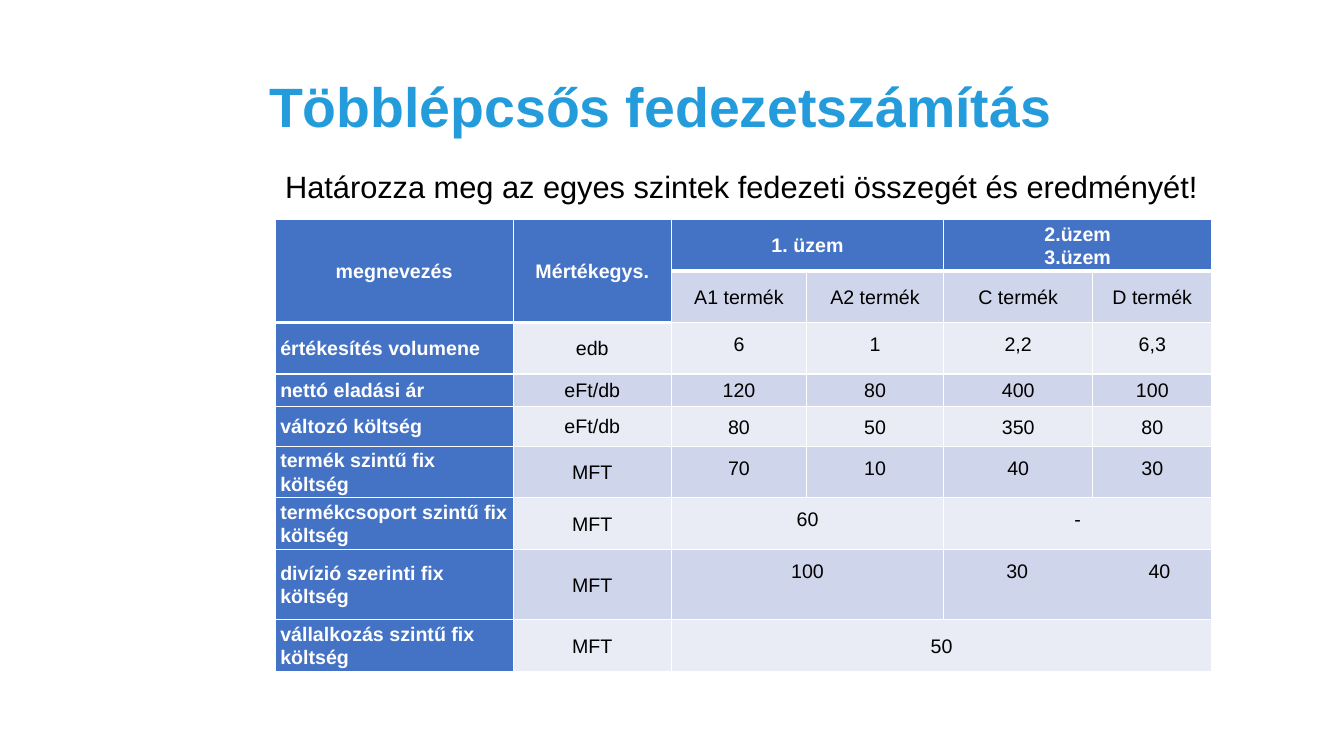
import pptx
import pptx.dml.color
import pptx.enum.shapes
import pptx.enum.text
import pptx.oxml.ns
import pptx.util
from lxml import etree

Inches = pptx.util.Inches
ALIGN = pptx.enum.text.PP_ALIGN
ANCHOR = pptx.enum.text.MSO_ANCHOR

COLORS = {
    "title": "249CDC",
    "text": "000000",
    "white": "FFFFFF",
    "header": "4472C4",
    "dark_band": "CFD5EA",
    "light_band": "E9EBF5",
}

COLUMN_WIDTHS = [2.36, 1.57, 1.34, 1.36, 1.48, 1.18]
ROW_HEIGHTS = [0.51, 0.51, 0.51, 0.32, 0.4, 0.51, 0.51, 0.7, 0.51]
COSTS = [
    ["megnevezés", "Mértékegys.", "1. üzem", "", "2.üzem\n3.üzem", ""],
    ["", "", "A1 termék", "A2 termék", "C termék", "D termék"],
    ["értékesítés volumene", "edb", "6", "1", "2,2", "6,3"],
    ["nettó eladási ár", "eFt/db", "120", "80", "400", "100"],
    ["változó költség", "eFt/db", "80", "50", "350", "80"],
    ["termék szintű fix költség", "MFT", "70", "10", "40", "30"],
    ["termékcsoport szintű fix költség", "MFT", "60", "", "-", ""],
    ["divízió szerinti fix költség", "MFT", "100", "", "\t30\t40", ""],
    ["vállalkozás szintű fix költség", "MFT", "50", "", "", ""],
]
MERGES = [
    (0, 0, 1, 0), (0, 1, 1, 1), (0, 2, 0, 3), (0, 4, 0, 5),
    (6, 2, 6, 3), (6, 4, 6, 5), (7, 2, 7, 3), (7, 4, 7, 5), (8, 2, 8, 5),
]
TOP_ALIGNED_ROWS = {2, 4, 5, 6, 7}
DIVISION_TABS = [0.68, 2.09]


def rgb(name):
    return pptx.dml.color.RGBColor.from_string(COLORS[name])


def write_text(frame, text, size=14, color="text", bold=False, align=ALIGN.LEFT,
               spacing=1.07, font="Arial", tabs=()):
    for number, line in enumerate(text.split("\n")):
        paragraph = frame.add_paragraph() if number else frame.paragraphs[0]
        paragraph.alignment = align
        paragraph.line_spacing = spacing
        if tabs:
            properties = paragraph._p.get_or_add_pPr()
            tab_list = etree.SubElement(properties, pptx.oxml.ns.qn("a:tabLst"))
            for position in tabs:
                etree.SubElement(tab_list, pptx.oxml.ns.qn("a:tab"),
                                 pos=str(Inches(position)), algn="ctr")
        run = paragraph.add_run()
        run.text = line
        run.font.name = font
        run.font.size = pptx.util.Pt(size)
        run.font.bold = bold
        run.font.color.rgb = rgb(color)


class CostSlide:
    """Slide builder holding the current slide and its styling."""

    def __init__(self, presentation):
        self.slide = presentation.slides.add_slide(presentation.slide_layouts[6])
        self.inset = Inches(0.05)

    def title(self, text, left, top, width, height):
        box = self.slide.shapes.add_textbox(
            Inches(left), Inches(top), Inches(width), Inches(height))
        box.text_frame.word_wrap = True
        box.text_frame.vertical_anchor = ANCHOR.MIDDLE
        write_text(box.text_frame, text, size=39.6, color="title", bold=True, spacing=0.9)

    def task(self, text, left, top, width, height):
        panel = self.slide.shapes.add_shape(
            pptx.enum.shapes.MSO_SHAPE.RECTANGLE,
            Inches(left), Inches(top), Inches(width), Inches(height))
        panel.shadow.inherit = False
        panel.fill.solid()
        panel.fill.fore_color.rgb = rgb("white")
        panel.line.fill.background()
        panel.text_frame.word_wrap = True
        panel.text_frame.vertical_anchor = ANCHOR.TOP
        write_text(panel.text_frame, text, size=22, spacing=0.9)

    def borders(self, cell, bottom):
        properties = cell._tc.get_or_add_tcPr()
        for side, points in (("L", 1), ("R", 1), ("T", 1), ("B", bottom)):
            line = etree.SubElement(properties, pptx.oxml.ns.qn("a:ln" + side),
                                    w=str(pptx.util.Pt(points)))
            fill = etree.SubElement(line, pptx.oxml.ns.qn("a:solidFill"))
            etree.SubElement(fill, pptx.oxml.ns.qn("a:srgbClr"), val=COLORS["white"])

    def cell(self, cell, text, row, column):
        is_header = row == 0 or column == 0 or (row == 1 and column == 1)
        is_top = row in TOP_ALIGNED_ROWS and column >= 2
        self.borders(cell, 3 if row == 0 or (row == 1 and column < 2) else 1)
        band = "dark_band" if row % 2 else "light_band"
        cell.fill.solid()
        cell.fill.fore_color.rgb = rgb("header" if is_header else band)
        cell.margin_left = cell.margin_right = self.inset
        cell.margin_top = cell.margin_bottom = 0
        cell.vertical_anchor = ANCHOR.TOP if is_top else ANCHOR.MIDDLE
        if text:
            has_tabs = "\t" in text
            is_left = has_tabs or (column == 0 and row > 1)
            write_text(cell.text_frame, text,
                       color="white" if is_header else "text", bold=is_header,
                       align=ALIGN.LEFT if is_left else ALIGN.CENTER,
                       spacing=1.5 if is_top else 1.07,
                       tabs=DIVISION_TABS if has_tabs else ())

    def table(self, left, top):
        table = self.slide.shapes.add_table(
            len(ROW_HEIGHTS), len(COLUMN_WIDTHS), Inches(left), Inches(top),
            Inches(sum(COLUMN_WIDTHS)), Inches(sum(ROW_HEIGHTS))).table
        for column, width in zip(table.columns, COLUMN_WIDTHS):
            column.width = Inches(width)
        for row, height in zip(table.rows, ROW_HEIGHTS):
            row.height = Inches(height)
        for first_row, first_column, last_row, last_column in MERGES:
            table.cell(first_row, first_column).merge(table.cell(last_row, last_column))
        for row, texts in enumerate(COSTS):
            for column, text in enumerate(texts):
                self.cell(table.cell(row, column), text, row, column)


def main():
    presentation = pptx.Presentation()
    presentation.slide_width = Inches(13.33)
    presentation.slide_height = Inches(7.5)
    costs = CostSlide(presentation)
    costs.title("Többlépcsős fedezetszámítás", 2.57, 0.65, 8.43, 0.87)
    costs.task("Határozza meg az egyes szintek fedezeti összegét és eredményét!",
               2.73, 1.66, 10, 4.17)
    costs.table(2.73, 2.18)
    presentation.save("out.pptx")


if __name__ == "__main__":
    main()
